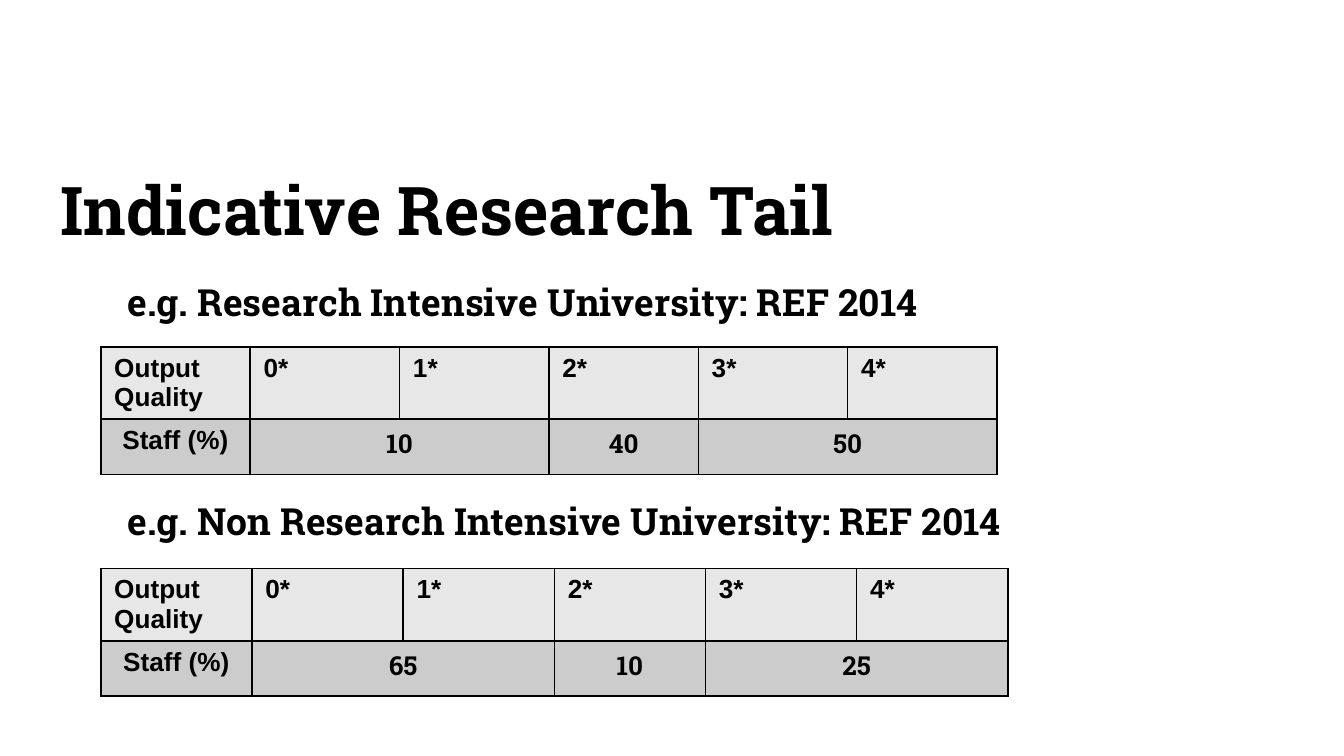
"""Build the research tail slide: two headed tables of staff share by output quality."""
from lxml.etree import SubElement
from pptx import Presentation
from pptx.dml.color import RGBColor
from pptx.enum.text import MSO_ANCHOR, MSO_AUTO_SIZE, PP_ALIGN
from pptx.oxml import parse_xml
from pptx.oxml.ns import nsdecls, qn
from pptx.util import Inches, Pt

TITLE = "Indicative Research Tail"
QUALITY = ["Output Quality", "0*", "1*", "2*", "3*", "4*"]
STAFF_LABEL = "Staff (%)"
SECTIONS = [
    {"heading": "e.g. Research Intensive University: REF 2014",
     "staff": [(1, 2, "10"), (3, 3, "40"), (4, 5, "50")], "top": 2.58, "width": 6.67},
    {"heading": "e.g. Non Research Intensive University: REF 2014",
     "staff": [(1, 2, "65"), (3, 3, "10"), (4, 5, "25")], "top": 4.23, "width": 6.75},
]
COLORS = {"text": "000000", "border": "000000", "quality": "E7E7E7", "staff": "CCCCCC"}
SLAB, SANS = "Roboto Slab", "Arial"
SLIDE_WIDTH = 10
SLIDE_HEIGHT = SLIDE_WIDTH * 9 / 16
TABLE_LEFT = 0.75
ROW_HEIGHTS = [0.54, 0.41]
HEADING_GAP = 93


def place(shape, left, top, width, height):
    box = {"left": left, "top": top, "width": width, "height": height}
    for name, value in box.items():
        setattr(shape, name, Inches(value))


def write(paragraph, text, font_name, size, **formats):
    paragraph.text = text
    for name, value in formats.items():
        setattr(paragraph, name, value)
    font = paragraph.runs[0].font
    for name, value in {"name": font_name, "size": Pt(size), "bold": True}.items():
        setattr(font, name, value)
    font.color.rgb = RGBColor.from_string(COLORS["text"])


def style_cell(cell, fill):
    cell.fill.solid()
    cell.fill.fore_color.rgb = RGBColor.from_string(COLORS[fill])
    properties = cell._tc.get_or_add_tcPr()
    for index, side in enumerate("LRTB"):
        properties.insert(index, parse_xml(
            f'<a:ln{side} {nsdecls("a")} w="{Pt(1)}"><a:solidFill>'
            f'<a:srgbClr val="{COLORS["border"]}"/></a:solidFill></a:ln{side}>'))


def add_quality_table(slide, section):
    frame = slide.shapes.add_table(
        len(ROW_HEIGHTS), len(QUALITY), Inches(TABLE_LEFT), Inches(section["top"]),
        Inches(section["width"]), Inches(sum(ROW_HEIGHTS)))
    table = frame.table
    for row, row_height, fill in zip(table.rows, ROW_HEIGHTS, ("quality", "staff")):
        row.height = Inches(row_height)
        for cell in row.cells:
            style_cell(cell, fill)
    for column, text in enumerate(QUALITY):
        write(table.cell(0, column).text_frame.paragraphs[0], text, SANS, 14)
    write(table.cell(1, 0).text_frame.paragraphs[0], STAFF_LABEL, SANS, 14,
          alignment=PP_ALIGN.CENTER)
    for first, last, share in section["staff"]:
        cell = table.cell(1, first)
        if last > first:
            cell.merge(table.cell(1, last))
        write(cell.text_frame.paragraphs[0], share, SLAB, 14, alignment=PP_ALIGN.CENTER)


def add_headings(body):
    frame = body.text_frame
    frame.auto_size = MSO_AUTO_SIZE.NONE
    for index, section in enumerate(SECTIONS):
        paragraph = frame.add_paragraph() if index else frame.paragraphs[0]
        properties = paragraph._p.get_or_add_pPr()
        properties.set("marL", str(Inches(0.5)))
        properties.set("indent", "0")
        SubElement(properties, qn("a:buNone"))
        write(paragraph, section["heading"], SLAB, 20, level=1,
              space_before=Pt(HEADING_GAP * index))


def main():
    presentation = Presentation()
    presentation.slide_width = Inches(SLIDE_WIDTH)
    presentation.slide_height = Inches(SLIDE_HEIGHT)
    slide = presentation.slides.add_slide(presentation.slide_layouts[1])
    title, body = slide.placeholders
    place(title, 0.35, 1.08, 9.21, 0.94)
    title.text_frame.auto_size = MSO_AUTO_SIZE.NONE
    title.text_frame.vertical_anchor = MSO_ANCHOR.MIDDLE
    write(title.text_frame.paragraphs[0], TITLE, SLAB, 36, alignment=PP_ALIGN.LEFT)
    place(body, 0.35, 2.03, 9.21, 3.54)
    add_headings(body)
    for section in SECTIONS:
        add_quality_table(slide, section)
    presentation.save("out.pptx")


if __name__ == "__main__":
    main()
